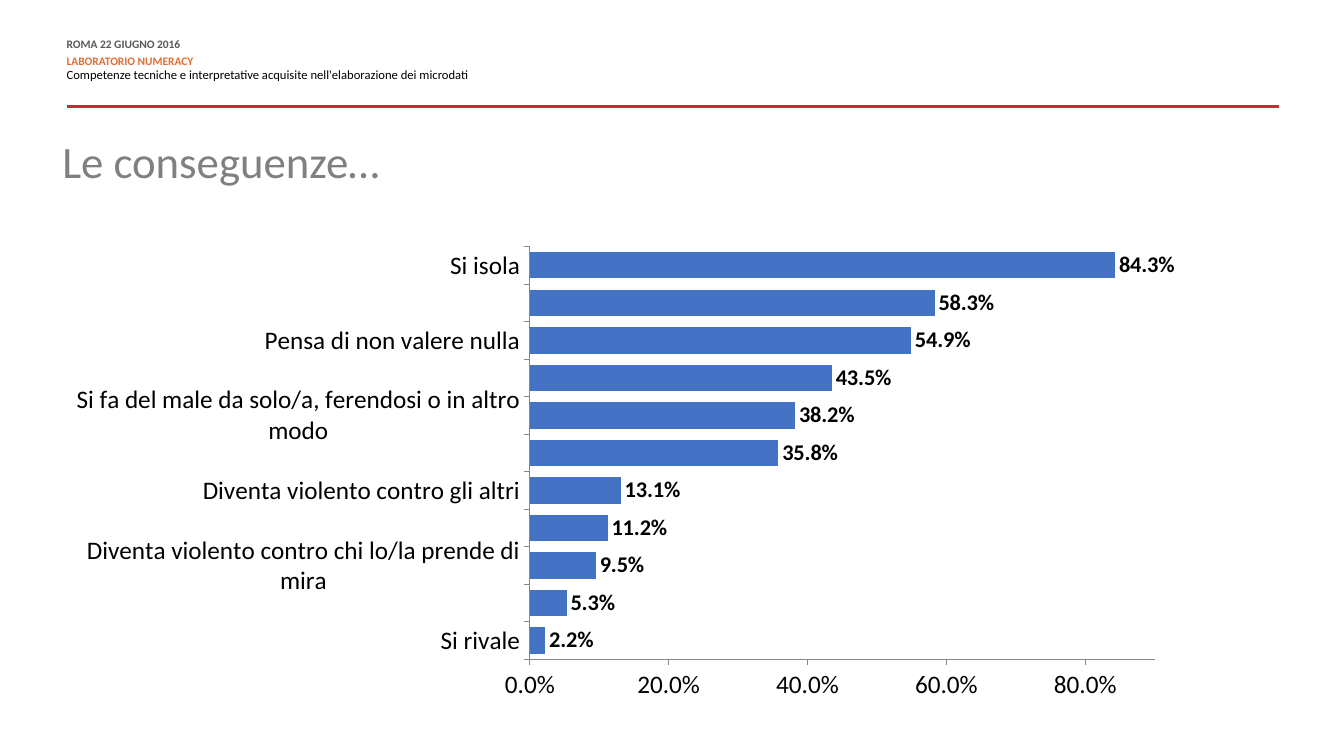
"""Builds the slide on the consequences of bullying, with its ranked bar chart."""
from dataclasses import dataclass

from lxml.etree import SubElement
from pptx import Presentation
from pptx.chart.data import CategoryChartData
from pptx.dml.color import RGBColor as Rgb
from pptx.enum.chart import XL_CHART_TYPE as ChartType
from pptx.enum.chart import XL_LABEL_POSITION as LabelPosition
from pptx.enum.chart import XL_TICK_MARK as TickMark
from pptx.enum.shapes import MSO_CONNECTOR as Connector
from pptx.enum.text import MSO_ANCHOR as Anchor
from pptx.enum.text import MSO_AUTO_SIZE as AutoSize
from pptx.enum.text import PP_ALIGN as Align
from pptx.oxml import parse_xml
from pptx.oxml.ns import nsdecls, qn
from pptx.util import Cm, Pt


@dataclass(frozen=True)
class Theme:
    font: str = "Calibri"
    ink: str = "000000"
    date: str = "595959"
    event: str = "E26F31"
    title: str = "808080"
    rule: str = "C72A31"
    bar: str = "4472C4"
    axis: str = "878787"
    small_size: float = 8.2
    topic_size: float = 9
    label_size: float = 16
    axis_size: float = 18
    title_size: float = 32


CONSEQUENCES = {
    "Si rivale": 0.022,
    "Fa gruppo con altri ragazzi e/o ragazze": 0.053,
    "Diventa violento contro chi lo/la prende di mira": 0.095,
    "Inizia ad andare male a scuola": 0.112,
    "Diventa violento contro gli altri": 0.131,
    "Diventa silenzioso/a, non si vuole più confidare": 0.358,
    "Si fa del male da solo/a, ferendosi o in altro modo": 0.382,
    "Diventa triste e non ha voglia di far niente": 0.435,
    "Pensa di non valere nulla": 0.549,
    "Fa finta di niente ma soffre e si vergogna": 0.583,
    "Si isola": 0.843,
}
PLOT_AREA = {"x": 0.399, "y": 0.025, "w": 0.551, "h": 0.888}
PERCENT = "0.0%"


class SlideBuilder:
    def __init__(self, slide, theme):
        self.slide = slide
        self.theme = theme

    def style(self, font, size, color, bold=False):
        font.name = self.theme.font
        font.size = Pt(size)
        font.bold = bold
        font.color.rgb = Rgb.from_string(color)

    def prepare(self, frame):
        frame.word_wrap = True
        frame.auto_size = AutoSize.NONE
        frame.vertical_anchor = Anchor.TOP
        frame.margin_left = frame.margin_right = 0
        frame.margin_top = frame.margin_bottom = 0

    def title(self, text, left, top, width, height):
        heading = self.slide.shapes.title
        heading.left, heading.top = Cm(left), Cm(top)
        heading.width, heading.height = Cm(width), Cm(height)
        frame = heading.text_frame
        self.prepare(frame)
        frame.text = text
        paragraph = frame.paragraphs[0]
        paragraph.alignment = Align.LEFT
        paragraph.line_spacing = 0.9
        self.style(paragraph.runs[0].font, self.theme.title_size, self.theme.title)

    def header(self, lines, left, top, width, height):
        box = self.slide.shapes.add_textbox(Cm(left), Cm(top), Cm(width), Cm(height))
        frame = box.text_frame
        self.prepare(frame)
        frame.text = "\n".join(text for text, *_ in lines)
        for paragraph, (_, size, color, bold, spacing, after) in zip(frame.paragraphs, lines):
            paragraph.line_spacing = spacing
            paragraph.space_after = Pt(after)
            self.style(paragraph.runs[0].font, size, color, bold)

    def rule(self, left, right, y):
        divider = self.slide.shapes.add_connector(
            Connector.STRAIGHT, Cm(left), Cm(y), Cm(right), Cm(y))
        divider.line.color.rgb = Rgb.from_string(self.theme.rule)
        divider.line.width = Pt(2)
        SubElement(divider.element.spPr, qn("a:effectLst"))

    def bar_chart(self, values, left, top, width, height):
        data = CategoryChartData(number_format=PERCENT)
        data.categories = list(values)
        data.add_series("Series 1", list(values.values()))
        chart = self.slide.shapes.add_chart(
            ChartType.BAR_CLUSTERED, Cm(left), Cm(top), Cm(width), Cm(height), data).chart
        chart.has_title = chart.has_legend = False
        self.style(chart.font, self.theme.axis_size, self.theme.ink)
        for axis in (chart.category_axis, chart.value_axis):
            axis.has_major_gridlines = False
            axis.major_tick_mark = TickMark.OUTSIDE
            axis.minor_tick_mark = TickMark.NONE
            axis.format.line.color.rgb = Rgb.from_string(self.theme.axis)
            axis.format.line.width = Pt(0.75)
        scale = chart.value_axis
        scale.minimum_scale, scale.maximum_scale, scale.major_unit = 0, 0.9, 0.2
        scale.tick_labels.number_format = PERCENT
        scale.tick_labels.number_format_is_linked = False
        plot = chart.plots[0]
        plot.gap_width = 42
        plot.vary_by_categories = False
        bars = plot.series[0].format.fill
        bars.solid()
        bars.fore_color.rgb = Rgb.from_string(self.theme.bar)
        plot.has_data_labels = True
        labels = plot.data_labels
        labels.show_value = True
        labels.position = LabelPosition.OUTSIDE_END
        labels.number_format = PERCENT
        labels.number_format_is_linked = False
        self.style(labels.font, self.theme.label_size, self.theme.ink, True)
        self.place_plot(chart, PLOT_AREA)

    def place_plot(self, chart, area):
        plot_area = chart.element.xpath("c:chart/c:plotArea")[0]
        for layout in plot_area.findall(qn("c:layout")):
            plot_area.remove(layout)
        modes = '<c:xMode val="edge"/><c:yMode val="edge"/>'
        sizes = "".join(f'<c:{side} val="{share}"/>' for side, share in area.items())
        plot_area.insert(0, parse_xml(
            f'<c:layout {nsdecls("c")}><c:manualLayout><c:layoutTarget val="inner"/>'
            f"{modes}{sizes}</c:manualLayout></c:layout>"))


def main():
    theme = Theme()
    deck = Presentation()
    deck.slide_width, deck.slide_height = Cm(33.87), Cm(19.05)
    builder = SlideBuilder(deck.slides.add_slide(deck.slide_layouts[5]), theme)
    builder.rule(1.68, 32.23, 2.69)
    builder.header([
        ("ROMA 22 GIUGNO 2016", theme.small_size, theme.date, True, Pt(8.1), 4.5),
        ("LABORATORIO NUMERACY", theme.small_size, theme.event, True, Pt(8.1), 0),
        ("Competenze tecniche e interpretative acquisite nell'elaborazione dei microdati",
         theme.topic_size, theme.ink, False, 0.9, 0),
    ], 1.68, 0.99, 21.18, 1.09)
    builder.bar_chart(CONSEQUENCES, 1.93, 5.92, 28.6, 11.71)
    builder.title("Le conseguenze…", 1.57, 3.53, 9.96, 2.87)
    deck.save("out.pptx")


if __name__ == "__main__":
    main()
